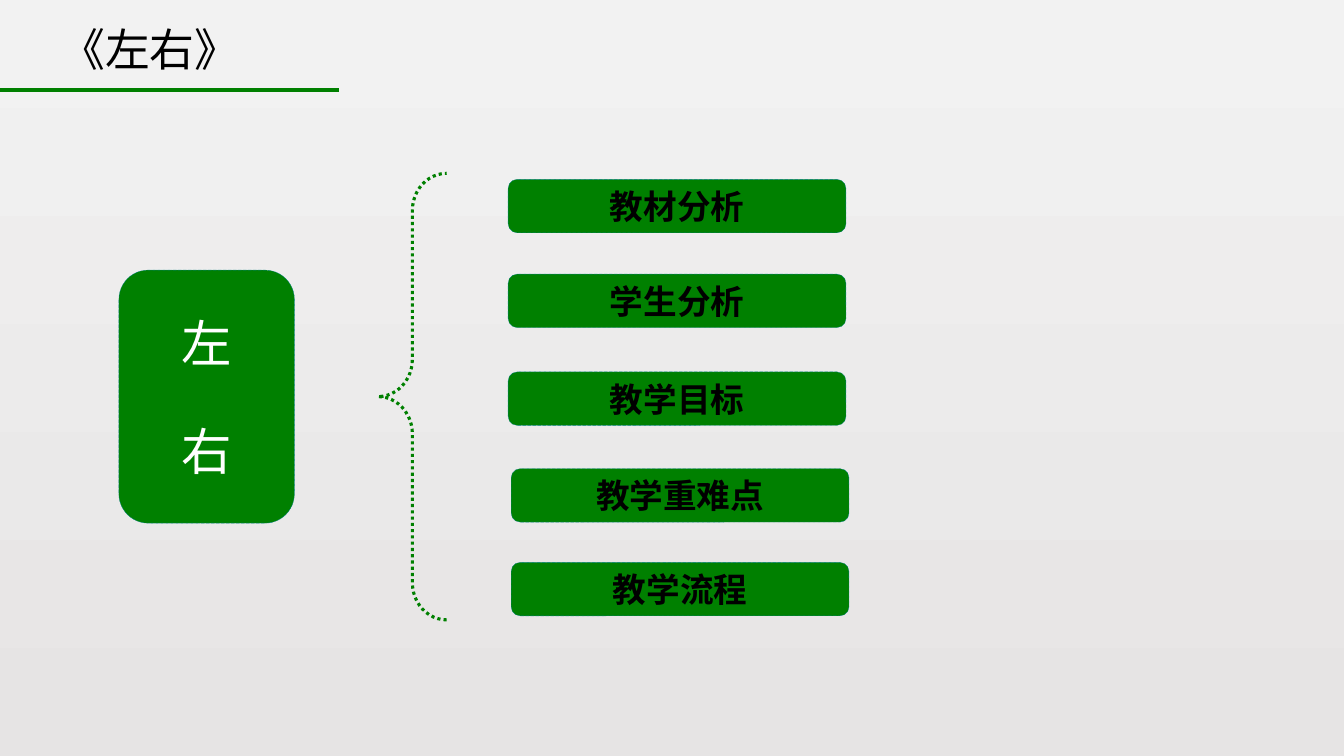
from dataclasses import dataclass

from lxml.etree import SubElement
from pptx import Presentation
from pptx.dml.color import RGBColor
from pptx.enum.dml import MSO_LINE
from pptx.enum.shapes import MSO_CONNECTOR, MSO_SHAPE
from pptx.enum.text import MSO_ANCHOR, PP_ALIGN
from pptx.oxml.ns import qn
from pptx.shapes.autoshape import Shape
from pptx.slide import Slide
from pptx.text.text import _Paragraph
from pptx.util import Inches, Pt

GREEN = "008000"
TEAL = "008080"
BLACK = "000000"
WHITE = "FFFFFF"
CJK_FONT = "Noto Sans CJK SC"


@dataclass
class Panel:
    lines: list[str]
    left: float
    top: float
    width: float
    height: float
    size: int
    color: str
    bold: bool = False
    gap: int = 0


def rgb(value: str) -> RGBColor:
    return RGBColor.from_string(value)


def format_runs(paragraph: _Paragraph, font: str, size: int, color: str, bold: bool = False) -> None:
    for run in paragraph.runs:
        run.font.name = font
        run.font.size = Pt(size)
        run.font.bold = bold
        run.font.color.rgb = rgb(color)
        SubElement(run.font._element, qn("a:ea"), typeface=CJK_FONT)


def set_dotted_line(shape: Shape, color: str, width: float) -> None:
    shape.shadow.inherit = False
    shape.line.color.rgb = rgb(color)
    shape.line.width = Pt(width)
    shape.line.dash_style = MSO_LINE.ROUND_DOT


def paint_background(slide: Slide) -> None:
    fill = slide.background.fill
    fill.gradient()
    fill.gradient_angle = 270
    for stop, position, color in zip(fill.gradient_stops, (0, 1), ("F2F2F2", "E6E4E4")):
        stop.position = position
        stop.color.rgb = rgb(color)


def add_heading(slide: Slide, text: str) -> None:
    heading = slide.shapes.add_textbox(Inches(0.5), Inches(0.17), Inches(3.02), Inches(0.63))
    heading.text_frame.word_wrap = True
    heading.text_frame.text = text
    format_runs(heading.text_frame.paragraphs[0], CJK_FONT, 32, BLACK)

    underline = slide.shapes.add_connector(
        MSO_CONNECTOR.STRAIGHT, 0, Inches(0.89), Inches(3.36), Inches(0.89)
    )
    underline.line.color.rgb = rgb(GREEN)
    underline.line.width = Pt(2.75)
    SubElement(underline._element.spPr, qn("a:effectLst"))


def add_panel(slide: Slide, panel: Panel) -> None:
    shape = slide.shapes.add_shape(
        MSO_SHAPE.ROUNDED_RECTANGLE,
        Inches(panel.left), Inches(panel.top), Inches(panel.width), Inches(panel.height),
    )
    shape.fill.solid()
    shape.fill.fore_color.rgb = rgb(GREEN)
    set_dotted_line(shape, TEAL, 0.25)
    frame = shape.text_frame
    frame.word_wrap = False
    frame.vertical_anchor = MSO_ANCHOR.MIDDLE
    frame.text = "\n".join(panel.lines)
    for index, paragraph in enumerate(frame.paragraphs):
        paragraph.alignment = PP_ALIGN.CENTER
        paragraph.space_before = Pt(panel.gap if index else 0)
        format_runs(paragraph, "Arial", panel.size, panel.color, panel.bold)


def add_brace(slide: Slide) -> None:
    brace = slide.shapes.add_shape(
        MSO_SHAPE.LEFT_BRACE, Inches(3.75), Inches(1.72), Inches(0.68), Inches(4.43)
    )
    brace.adjustments[0] = 0.543
    brace.fill.background()
    set_dotted_line(brace, GREEN, 2.25)


def main() -> None:
    presentation = Presentation()
    presentation.slide_width = Inches(13.33)
    presentation.slide_height = Inches(7.5)
    slide = presentation.slides.add_slide(presentation.slide_layouts[6])

    topics = [
        ("教材分析", 5.04, 1.78),
        ("学生分析", 5.04, 2.72),
        ("教学目标", 5.04, 3.69),
        ("教学重难点", 5.07, 4.65),
        ("教学流程", 5.07, 5.58),
    ]
    panels = [
        Panel([topic], left, top, 3.35, 0.53, 24, BLACK, bold=True)
        for topic, left, top in topics
    ]
    panels.append(Panel(["左", "右"], 1.18, 2.68, 1.74, 2.51, 36, WHITE, gap=34))

    paint_background(slide)
    add_heading(slide, "《左右》")
    for panel in panels:
        add_panel(slide, panel)
    add_brace(slide)
    presentation.save("out.pptx")


if __name__ == "__main__":
    main()
